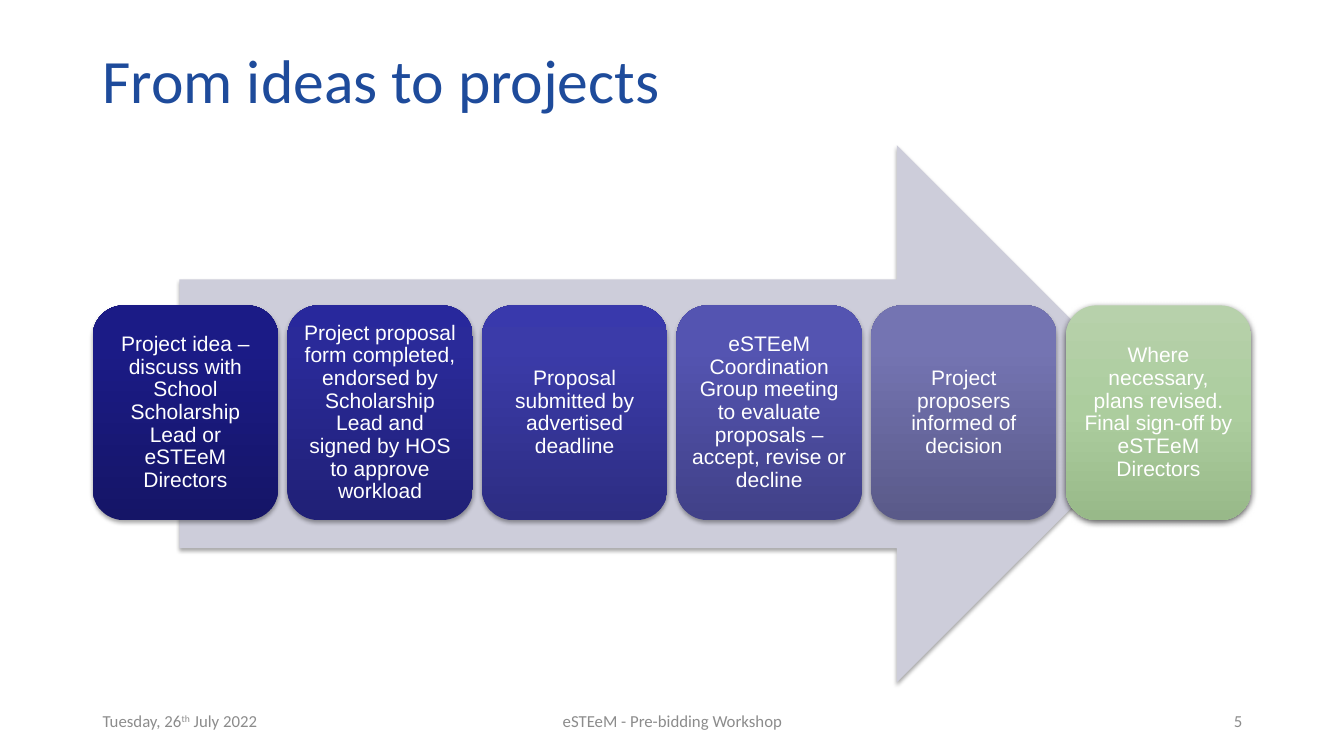
from copy import deepcopy
from dataclasses import dataclass

from lxml.etree import SubElement
from pptx import Presentation
from pptx.dml.color import RGBColor
from pptx.enum.shapes import MSO_SHAPE
from pptx.enum.text import MSO_ANCHOR, PP_ALIGN
from pptx.oxml.ns import qn
from pptx.util import Inches, Pt

COLOURS = {"title": "1E4B9B", "footer": "8C8C8C", "arrow": "CDCDDA",
           "text": "FFFFFF", "shadow": "000000"}

# Character formats
TITLE = {"name": "Calibri", "size": Pt(44)}
FOOTER = {"name": "Calibri", "size": Pt(12)}
STEP = {"name": "Arial", "size": Pt(15)}


@dataclass
class Area:
    """A rectangle in percent of the slide's width and height."""
    x: float
    y: float
    w: float
    h: float


@dataclass
class Shadow:
    blur: float = 3.1
    dist: float = 1.8
    alpha: int = 35


@dataclass
class Step:
    text: str
    stops: tuple
    middle: float = 0.8
    angle: int = 90
    shadow: Shadow = Shadow


@dataclass
class Label:
    runs: tuple
    area: Area
    colour: str
    fmt: dict
    align: PP_ALIGN = PP_ALIGN.LEFT
    spacing: float = 1.0


SOFT, STRONG = Shadow(), Shadow(4.5, 1.5, 63)

STEPS = [
    Step("Project idea – discuss with School Scholarship Lead or eSTEeM Directors",
         ("151567", "1B1B86", "191988"), shadow=SOFT),
    Step("Project proposal form completed, endorsed by Scholarship Lead and "
         "signed by HOS to approve workload",
         ("202076", "2A2A99", "28289C"), shadow=SOFT),
    Step("Proposal submitted by advertised deadline",
         ("2D2D82", "3B3BA9", "3939AC"), shadow=SOFT),
    Step("eSTEeM Coordination Group meeting to evaluate proposals – accept, "
         "revise or decline",
         ("414188", "5454B1", "5353B3"), shadow=SOFT),
    Step("Project proposers informed of decision",
         ("5A5A89", "7474B2", "7474B4"), shadow=SOFT),
    Step("Where necessary, plans revised. Final sign-off by eSTEeM Directors",
         ("B7D1AB", "ACCD9E", "98B989"), 0.5, 270, STRONG),
]
FIRST_STEP = Area(6.9, 40.4, 13.8, 28.4)
STEP_PITCH = 14.48
ARROW = Area(13.35, 19.2, 73.37, 71.07)

# Runs are (text, baseline shift in percent)
LABELS = [
    Label((("From ideas to projects", 0),), Area(6.9, 5.33, 86.27, 11.33),
          "title", TITLE, spacing=0.9),
    Label((("Tuesday, 26", 0), ("th", 30), (" July 2022", 0)),
          Area(6.9, 92.67, 22.5, 5.33), "footer", FOOTER),
    Label((("eSTEeM - Pre-bidding Workshop", 0),),
          Area(33.16, 92.67, 33.76, 5.33), "footer", FOOTER, PP_ALIGN.CENTER),
    Label((("5", 0),), Area(70.67, 92.67, 22.5, 5.33),
          "footer", FOOTER, PP_ALIGN.RIGHT),
]

prs = Presentation()
prs.slide_width, prs.slide_height = Inches(13.33), Inches(7.5)
s = prs.slides.add_slide(prs.slide_layouts[6])


def place(area: Area) -> tuple:
    """Turn percent shares into slide lengths."""
    return (int(prs.slide_width * area.x / 100), int(prs.slide_height * area.y / 100),
            int(prs.slide_width * area.w / 100), int(prs.slide_height * area.h / 100))


def set_all(target, values: dict) -> None:
    for name, value in values.items():
        setattr(target, name, value)


def write(tf, runs: tuple, colour: str, fmt: dict, align, spacing: float) -> None:
    set_all(tf, {"word_wrap": True, "vertical_anchor": MSO_ANCHOR.MIDDLE})
    p = tf.paragraphs[0]
    set_all(p, {"alignment": align, "line_spacing": spacing})
    for text, shift in runs:
        r = p.add_run()
        r.text = text
        set_all(r.font, fmt)
        r.font.color.rgb = RGBColor.from_string(COLOURS[colour])
        if shift:
            r.font._element.set("baseline", str(shift * 1000))


def add_block(kind, area: Area, shadow: Shadow):
    """Add an unlined shape with a shadow straight below it."""
    sp = s.shapes.add_shape(kind, *place(area))
    sp.line.fill.background()
    sp.shadow.inherit = False
    effects = sp._element.spPr.find(qn("a:effectLst"))
    outer = SubElement(effects, qn("a:outerShdw"), blurRad=str(Pt(shadow.blur)),
                       dist=str(Pt(shadow.dist)), dir="5400000", rotWithShape="0")
    clr = SubElement(outer, qn("a:srgbClr"), val=COLOURS["shadow"])
    SubElement(clr, qn("a:alpha"), val=str(shadow.alpha * 1000))
    return sp


def add_step(index: int, step: Step) -> None:
    area = Area(FIRST_STEP.x + index * STEP_PITCH, FIRST_STEP.y,
                FIRST_STEP.w, FIRST_STEP.h)
    sp = add_block(MSO_SHAPE.ROUNDED_RECTANGLE, area, step.shadow)
    # Three-stop gradient
    sp.fill.gradient()
    sp.fill.gradient_angle = step.angle
    stop_list = sp._element.spPr.find(".//" + qn("a:gsLst"))
    stop_list.append(deepcopy(stop_list[-1]))
    for stop, colour, position in zip(sp.fill.gradient_stops, step.stops,
                                      (0, step.middle, 1)):
        stop.color.rgb = RGBColor.from_string(colour)
        stop.position = position
    # Caption
    tf = sp.text_frame
    set_all(tf, {f"margin_{side}": Inches(0.06)
                 for side in ("left", "top", "right", "bottom")})
    write(tf, ((step.text, 0),), "text", STEP, PP_ALIGN.CENTER, 0.9)


# Title and footer
for label in LABELS:
    box = s.shapes.add_textbox(*place(label.area))
    write(box.text_frame, label.runs, label.colour, label.fmt,
          label.align, label.spacing)

# Arrow behind the steps
arrow = add_block(MSO_SHAPE.RIGHT_ARROW, ARROW, SOFT)
arrow.fill.solid()
arrow.fill.fore_color.rgb = RGBColor.from_string(COLOURS["arrow"])

# Steps
for i, step in enumerate(STEPS):
    add_step(i, step)

prs.save("out.pptx")
